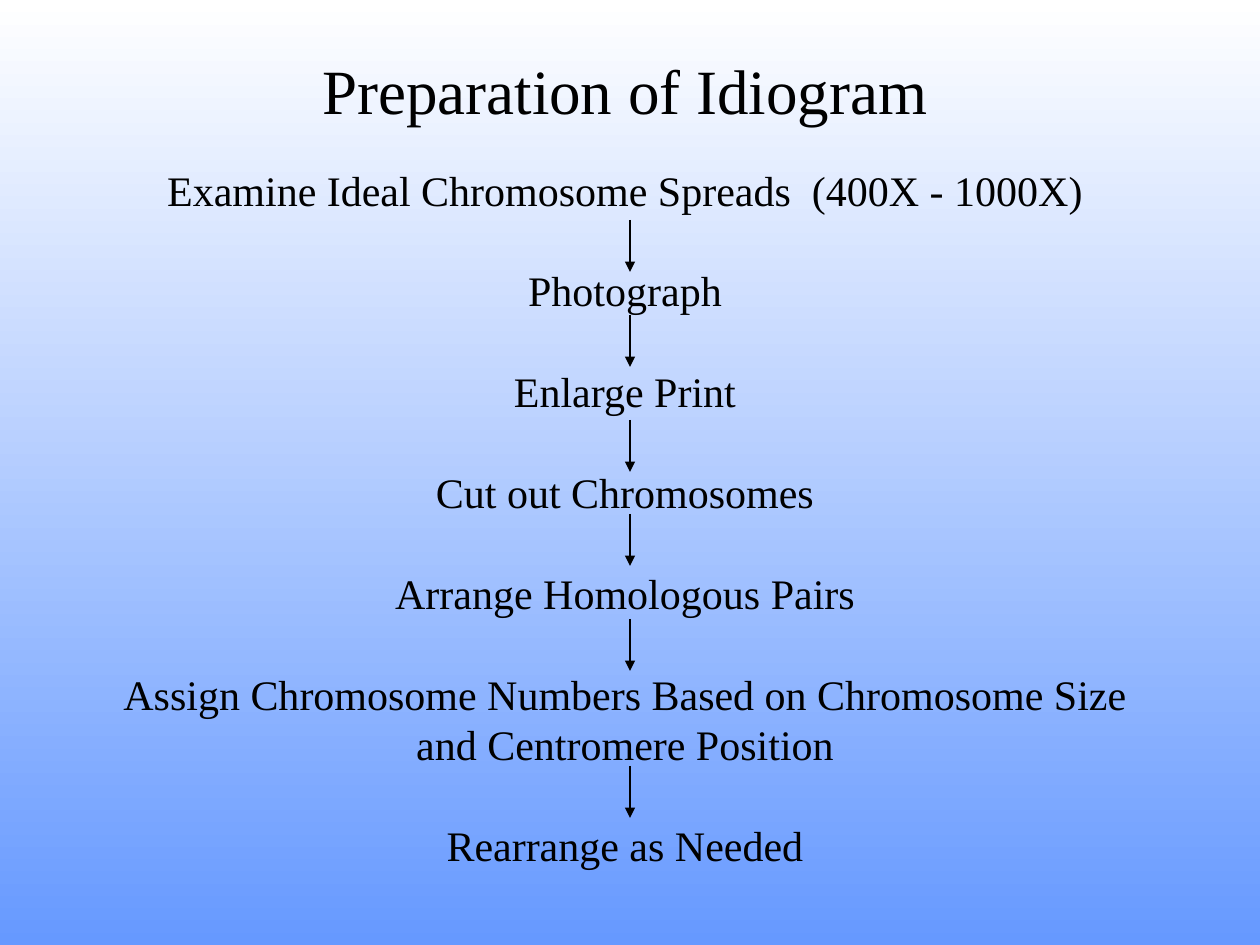
from lxml import etree
from pptx import Presentation
from pptx import util as u
from pptx.dml.color import RGBColor
from pptx.enum import shapes, text
from pptx.oxml import ns

PX = 914400 / 126
BLACK = RGBColor(0x00, 0x00, 0x00)
WHITE = RGBColor(0xFF, 0xFF, 0xFF)
BLUE = RGBColor(0x66, 0x99, 0xFF)
FONT = "Times New Roman"

LEFT, WIDTH = 97, 1056
ARROW_X, ARROW_LENGTH = 630, 52
ARROW_TOPS = [220, 315, 420, 514, 619, 766]
STEPS = [
    "Examine Ideal Chromosome Spreads  (400X - 1000X)",
    "Photograph",
    "Enlarge Print",
    "Cut out Chromosomes",
    "Arrange Homologous Pairs",
    "Assign Chromosome Numbers Based on Chromosome Size and Centromere Position",
    "Rearrange as Needed",
]


def px(n):
    return u.Emu(round(n * PX))


def paint_background(s):
    fill = s.background.fill
    fill.gradient()
    fill.gradient_angle = 270
    for stop, color in zip(fill.gradient_stops, (WHITE, BLUE)):
        stop.color.rgb = color


def fill_placeholder(sp, top, height, lines, size):
    """Place a placeholder and give it centred, unbulleted paragraphs."""
    sp.left, sp.top, sp.width, sp.height = map(px, (LEFT, top, WIDTH, height))
    tf = sp.text_frame
    tf.margin_left = tf.margin_right = tf.margin_top = tf.margin_bottom = 0
    tf.word_wrap = True
    tf.auto_size = text.MSO_AUTO_SIZE.NONE
    tf.vertical_anchor = text.MSO_ANCHOR.TOP
    tf.text = "\n".join(lines)
    for p in tf.paragraphs:
        p.alignment = text.PP_ALIGN.CENTER
        p.space_before = u.Pt(0)
        p.font.name, p.font.size = FONT, u.Pt(size)
        p.font.color.rgb = BLACK
        pPr = p._p.get_or_add_pPr()
        pPr.set("marL", "0")
        pPr.set("indent", "0")
        pPr.insert_element_before(
            pPr.makeelement(ns.qn("a:buNone")), "a:tabLst", "a:defRPr", "a:extLst")
    return tf


def add_down_arrow(s, top):
    sp = s.shapes.add_connector(
        shapes.MSO_CONNECTOR.STRAIGHT,
        px(ARROW_X), px(top), px(ARROW_X), px(top + ARROW_LENGTH))
    sp.line.color.rgb = BLACK
    sp.line.width = u.Pt(0.75)
    etree.SubElement(sp.line._get_or_add_ln(), ns.qn("a:tailEnd"), type="triangle")
    etree.SubElement(sp._element.spPr, ns.qn("a:effectLst"))


def main():
    prs = Presentation()
    prs.slide_width, prs.slide_height = u.Inches(10), u.Inches(7.5)
    s = prs.slides.add_slide(prs.slide_layouts[1])
    paint_background(s)

    # Title
    fill_placeholder(s.shapes.title, 52, 72, ["Preparation of Idiogram"], 36)

    # Steps, one line apart
    tf = fill_placeholder(s.placeholders[1], 164, 708, STEPS, 24)
    for p in tf.paragraphs:
        p.line_spacing = p.space_after = u.Pt(28.8)

    # Arrows between the steps
    for top in ARROW_TOPS:
        add_down_arrow(s, top)

    prs.save("out.pptx")


if __name__ == "__main__":
    main()
